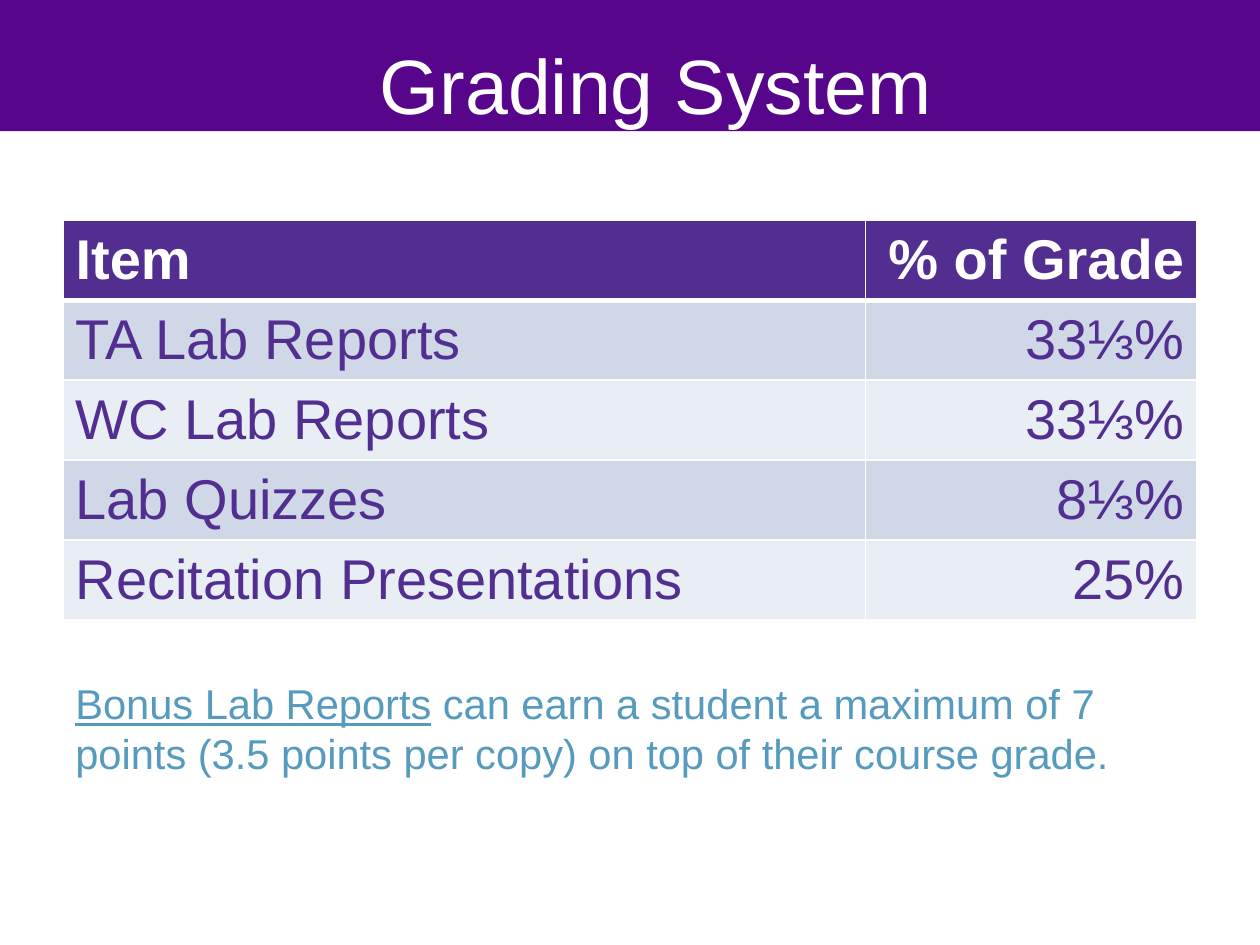
"""Build the grading system slide with its table of course weights."""
from dataclasses import dataclass

from lxml.etree import SubElement
from pptx import Presentation
from pptx.dml.color import RGBColor
from pptx.enum.shapes import MSO_SHAPE
from pptx.enum.text import MSO_ANCHOR, PP_ALIGN
from pptx.oxml.ns import qn
from pptx.util import Pt


@dataclass(frozen=True)
class Theme:
    font: str = "Arial"
    banner: str = "57068C"
    accent: str = "522E91"
    light: str = "FFFFFF"
    note: str = "569BBE"
    bands: tuple = ("D0D8E8", "E9EDF4")
    title_size: float = 44
    table_size: float = 32
    note_size: float = 23.8
    rule: float = 1
    header_rule: float = 3


class SlideBuilder:
    def __init__(self, page, theme):
        self.page = page
        self.theme = theme

    def span(self, para, text, size, color, bold=False, underline=False):
        run = para.add_run()
        run.text = text
        run.font.name = self.theme.font
        run.font.size = Pt(size)
        run.font.color.rgb = RGBColor.from_string(color)
        run.font.bold = bold
        run.font.underline = underline

    def banner(self, left, top, width, height):
        band = self.page.shapes.add_shape(
            MSO_SHAPE.RECTANGLE, Pt(left), Pt(top), Pt(width), Pt(height))
        band.shadow.inherit = False
        band.fill.solid()
        band.fill.fore_color.rgb = RGBColor.from_string(self.theme.banner)
        band.line.fill.background()

    def text(self, left, top, width, height):
        box = self.page.shapes.add_textbox(Pt(left), Pt(top), Pt(width), Pt(height))
        frame = box.text_frame
        frame.word_wrap = True
        return frame.paragraphs[0]

    def border(self, cell, side, width):
        properties = cell._tc.get_or_add_tcPr()
        line = SubElement(properties, qn(f"a:ln{side}"), w=str(Pt(width)))
        fill = SubElement(line, qn("a:solidFill"))
        SubElement(fill, qn("a:srgbClr"), val=self.theme.light)

    def cell(self, cell, text, row, align):
        theme = self.theme
        header = row == 0
        rules = {"L": theme.rule, "R": theme.rule,
                 "T": theme.header_rule if row == 1 else theme.rule,
                 "B": theme.header_rule if header else theme.rule}
        for side, width in rules.items():
            self.border(cell, side, width)
        cell.fill.solid()
        fill = theme.accent if header else theme.bands[(row - 1) % 2]
        cell.fill.fore_color.rgb = RGBColor.from_string(fill)
        cell.vertical_anchor = MSO_ANCHOR.MIDDLE
        para = cell.text_frame.paragraphs[0]
        para.alignment = align
        color = theme.light if header else theme.accent
        self.span(para, text, theme.table_size, color, bold=header)

    def table(self, left, top, widths, row_height, rows, aligns):
        table = self.page.shapes.add_table(
            len(rows), len(widths), Pt(left), Pt(top),
            Pt(sum(widths)), Pt(row_height * len(rows))).table
        for column, width in zip(table.columns, widths):
            column.width = Pt(width)
        for row, values in enumerate(rows):
            table.rows[row].height = Pt(row_height)
            for column, (value, align) in enumerate(zip(values, aligns)):
                self.cell(table.cell(row, column), value, row, align)


def main():
    deck = Presentation()
    deck.slide_width, deck.slide_height = Pt(720), Pt(540)
    theme = Theme()
    builder = SlideBuilder(deck.slides.add_slide(deck.slide_layouts[6]), theme)

    builder.banner(0, 0, 720, 75)
    title = builder.text(210, 18, 342, 90)
    builder.span(title, "Grading System", theme.title_size, theme.light)

    grades = [
        ("Item", "% of Grade"),
        ("TA Lab Reports", "33⅓%"),
        ("WC Lab Reports", "33⅓%"),
        ("Lab Quizzes", "8⅓%"),
        ("Recitation Presentations", "25%"),
    ]
    builder.table(36, 126, (458.5, 189.5), 45.55, grades,
                  (PP_ALIGN.LEFT, PP_ALIGN.RIGHT))

    note = builder.text(36, 384, 648, 72)
    builder.span(note, "Bonus Lab Reports", theme.note_size, theme.note, underline=True)
    builder.span(note, " can earn a student a maximum of 7 points (3.5 points per copy)"
                 " on top of their course grade.", theme.note_size, theme.note)
    deck.save("out.pptx")


if __name__ == "__main__":
    main()
